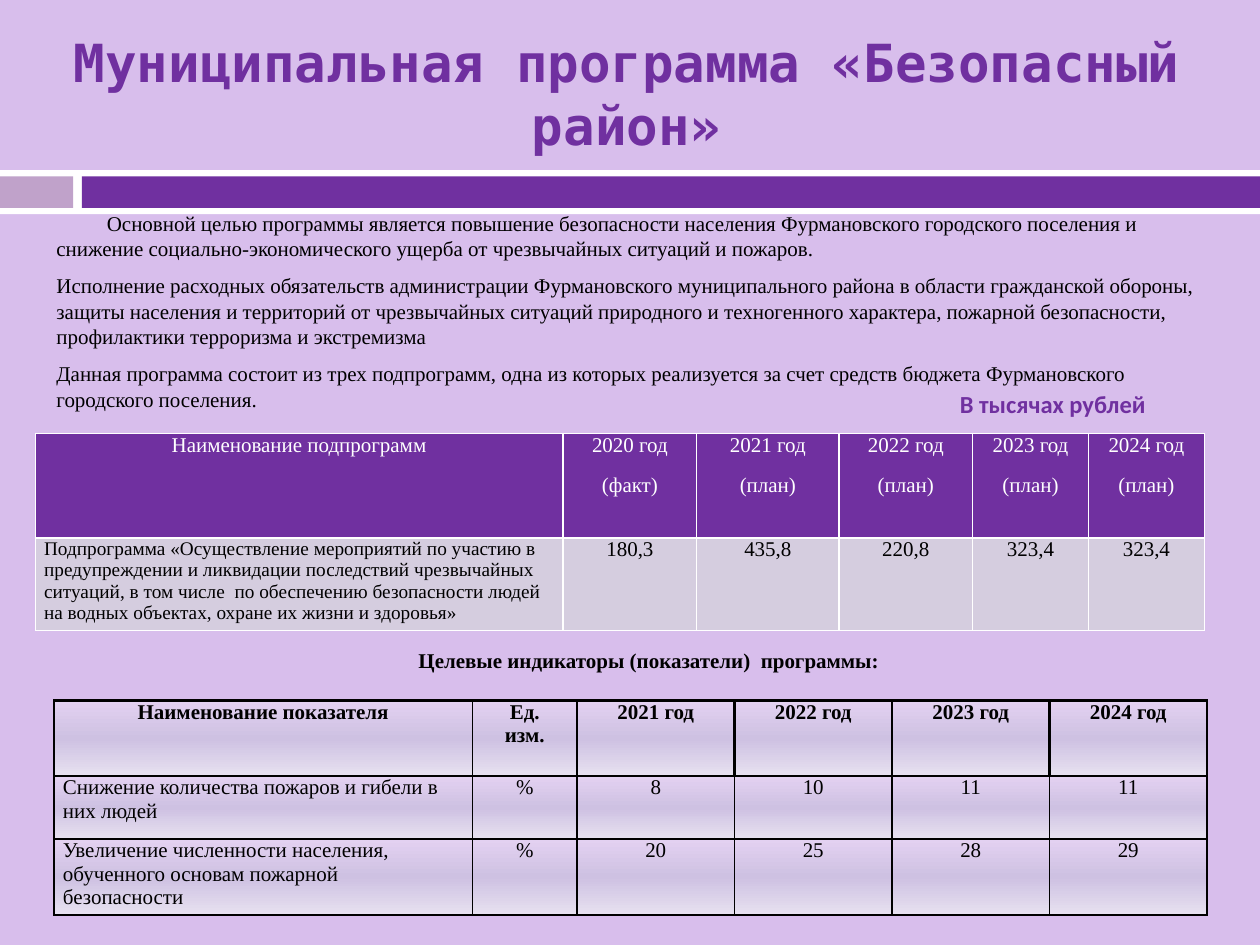
from pptx import Presentation
from pptx.dml.color import RGBColor
from pptx.enum.shapes import MSO_SHAPE as Shape
from pptx.enum.text import MSO_ANCHOR as Anchor, PP_ALIGN as Align
from pptx.oxml import parse_xml
from pptx.oxml.ns import nsdecls
from pptx.util import Inches, Pt

rgb = RGBColor.from_string
PURPLE, BLACK, WHITE = "7030A0", "000000", "FFFFFF"
SERIF = "Times New Roman"


def write(frame, text, size=12, face=SERIF, color=BLACK, bold=False,
          align=Align.LEFT, before=0, after=0):
    """Fill a text frame, one paragraph for each line of text."""
    frame.word_wrap = True
    frame.text = text
    for par in frame.paragraphs:
        par.alignment = align
        par.space_before, par.space_after = Pt(before), Pt(after)
        font = par.font
        font.size, font.name, font.bold = Pt(size), face, bold
        font.color.rgb = rgb(color)


def border(cell, color, widths):
    """Draw the left, right, top and bottom lines, with widths in points."""
    props = cell._tc.get_or_add_tcPr()
    for side, width in zip("LRTB", widths):
        props.append(parse_xml(
            f'<a:ln{side} {nsdecls("a")} w="{Pt(width)}"><a:solidFill>'
            f'<a:srgbClr val="{color}"/></a:solidFill></a:ln{side}>'))


deck = Presentation()
deck.slide_width, deck.slide_height = Inches(10), Inches(7.5)
slide = deck.slides.add_slide(deck.slide_layouts[6])
slide.background.fill.solid()
slide.background.fill.fore_color.rgb = rgb("D8BEEC")

# Band under the title
for left, top, width, height, color in [
    (0, 1.35, 10, 0.35, WHITE),
    (0, 1.4, 0.58, 0.25, "C0A2CA"),
    (0.65, 1.4, 9.35, 0.25, PURPLE),
]:
    bar = slide.shapes.add_shape(Shape.RECTANGLE, Inches(left), Inches(top),
                                 Inches(width), Inches(height))
    bar.shadow.inherit = False
    bar.fill.solid()
    bar.fill.fore_color.rgb = rgb(color)
    bar.line.fill.background()

# Text boxes
goals = "\n".join([
    "Основной целью программы является повышение безопасности населения "
    "Фурмановского городского поселения и снижение социально-экономического "
    "ущерба от чрезвычайных ситуаций и пожаров.",
    "Исполнение расходных обязательств администрации Фурмановского "
    "муниципального района в области гражданской обороны, защиты населения и "
    "территорий от чрезвычайных ситуаций природного и техногенного характера, "
    "пожарной безопасности, профилактики терроризма и экстремизма",
    "Данная программа состоит из трех подпрограмм, одна из которых реализуется "
    "за счет средств бюджета Фурмановского городского поселения.",
])
frames = []
for left, top, width, height, text, style in [
    (0.31, 0.47, 9.33, 0.53, "Муниципальная программа «Безопасный район»",
     dict(size=30, face="DejaVu Sans Mono", color=PURPLE, bold=True,
          align=Align.CENTER)),
    (0.35, 1.62, 9.3, 1.92, goals, dict(before=7)),
    (7.52, 3.04, 2.27, 0.47, "В тысячах рублей",
     dict(size=14, face="Calibri", color=PURPLE, bold=True)),
    (0.51, 5.09, 9.28, 0.47, "Целевые индикаторы (показатели)  программы:",
     dict(bold=True, align=Align.CENTER, before=7)),
]:
    box = slide.shapes.add_textbox(Inches(left), Inches(top),
                                   Inches(width), Inches(height))
    write(box.text_frame, text, **style)
    frames.append(box.text_frame)
frames[0].vertical_anchor = Anchor.MIDDLE
frames[1].paragraphs[0]._p.get_or_add_pPr().set("indent", str(Inches(0.4)))

# Tables
costs = [
    ["Наименование подпрограмм", "2020 год\n(факт)"]
    + [f"{year} год\n(план)" for year in range(2021, 2025)],
    ["Подпрограмма «Осуществление мероприятий по участию в предупреждении и "
     "ликвидации последствий чрезвычайных ситуаций, в том числе  по обеспечению "
     "безопасности людей на водных объектах, охране их жизни и здоровья»",
     "180,3", "435,8", "220,8", "323,4", "323,4"],
]
goal_rows = [
    ["Наименование показателя", "Ед.\nизм."]
    + [f"{year} год" for year in range(2021, 2025)],
    ["Снижение количества пожаров и гибели в них людей",
     "%", "8", "10", "11", "11"],
    ["Увеличение численности населения, обученного основам пожарной безопасности",
     "%", "20", "25", "28", "29"],
]
stops = "".join(
    f'<a:gs pos="{pos}"><a:srgbClr val="{color}"/></a:gs>'
    for pos, color in [(0, "E3D1F1"), (50000, "CEC1E2"), (100000, "E7E1F0")])
blend = (f'<a:gradFill {nsdecls("a")} rotWithShape="1"><a:gsLst>{stops}</a:gsLst>'
         '<a:lin ang="5400000" scaled="0"/></a:gradFill>')

for left, top, cols, heights, data in [
    (0.28, 3.44, [4.19, 1.06, 1.13, 1.06, 0.92, 0.92], [0.83, 0.68], costs),
    (0.43, 5.56, [3.32, 0.83] + [1.25] * 4, [0.6, 0.5, 0.55], goal_rows),
]:
    table = slide.shapes.add_table(
        len(heights), len(cols), Inches(left), Inches(top),
        Inches(sum(cols)), Inches(sum(heights))).table
    table.horz_banding = False
    for col, width in zip(table.columns, cols):
        col.width = Inches(width)
    for r, row in enumerate(data):
        table.rows[r].height = Inches(heights[r])
        head = r == 0
        for c, text in enumerate(row):
            cell = table.cell(r, c)
            cell.margin_left = cell.margin_right = Inches(0.07)
            cell.margin_top = cell.margin_bottom = 0
            align = Align.CENTER if head or c else Align.LEFT
            if data is costs:
                write(cell.text_frame, text, size=12 if head or c else 11,
                      color=WHITE if head else BLACK, align=align,
                      after=10 if head and c else 0)
                border(cell, WHITE, [1] * 4)
                cell.fill.solid()
                cell.fill.fore_color.rgb = rgb(PURPLE if head else "D5CDDF")
            else:
                write(cell.text_frame, text, bold=head, align=align)
                sides = [1.5 if edge in (0, 2, 6) or head and edge > 2 else 1
                         for edge in (c, c + 1)]
                ends = [1.5 if edge < 2 else 1 for edge in (r, r + 1)]
                border(cell, BLACK, sides + ends)
                cell._tc.get_or_add_tcPr().append(parse_xml(blend))

deck.save("out.pptx")
